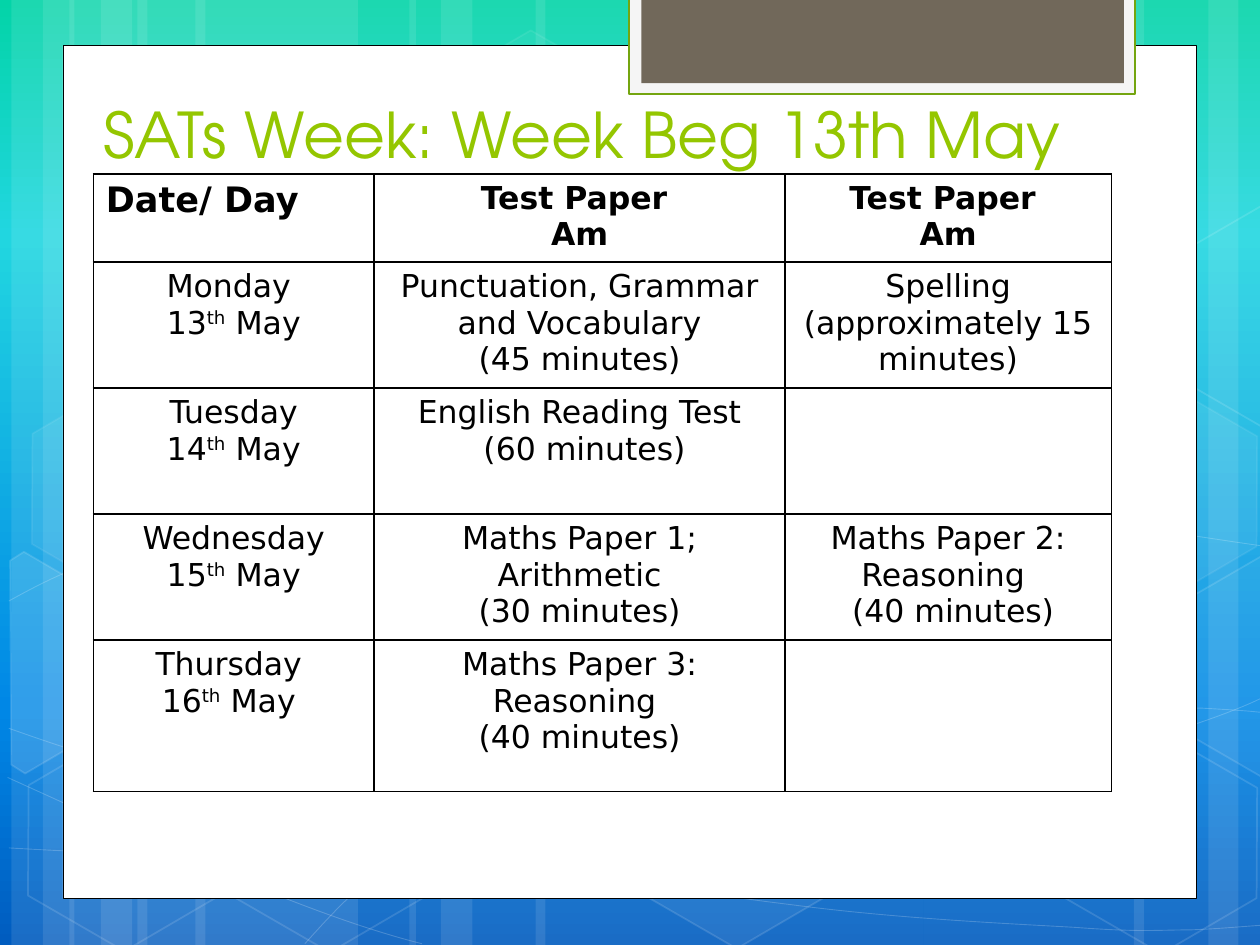
from typing import NamedTuple, Optional

from lxml import etree
from pptx import Presentation
from pptx import util as u
from pptx.dml.color import RGBColor
from pptx.enum import shapes, text
from pptx.oxml import ns, parse_xml

WHITE = RGBColor(0xFF, 0xFF, 0xFF)
BLACK = RGBColor(0, 0, 0)
PALE = RGBColor(0xF5, 0xF5, 0xF5)
GREEN = RGBColor(0x74, 0xA5, 0x10)
LIME = RGBColor(0x94, 0xC6, 0x00)
TAUPE = RGBColor(0x71, 0x68, 0x5A)
SKY = [(0, RGBColor(0x03, 0xD4, 0xA8)), (25, RGBColor(0x21, 0xD6, 0xE0)),
       (75, RGBColor(0x00, 0x87, 0xE6)), (100, RGBColor(0x00, 0x5C, 0xBF))]
BODY, HEAD = "DejaVu Sans", "TeX Gyre Adventor"


class Style(NamedTuple):
    fill: Optional[RGBColor] = None
    fill_alpha: int = 100
    line: Optional[RGBColor] = None
    width: float = 1
    line_alpha: int = 100


class Hexagon(NamedTuple):
    x: float
    y: float
    fill_alpha: int
    line_alpha: int


class Shard(NamedTuple):
    points: list
    fill_alpha: int


STRIPES = [(1.09, 1.75), (0.09, 0.5), (0.34, 0.83), (1.55, 1.75), (0.55, 0.5), (0.8, 0.83),
           (7.33, 1.75), (9.59, 0.5), (9, 0.83), (4.25, 3.08), (3.25, 0.5), (3.5, 0.83)]
CURVES = [
    [(0.07, 6.73), (0.61, 6.76), (1.15, 6.79), (1.9, 6.78), (2.65, 6.77), (3.58, 6.75),
     (4.58, 6.65), (5.58, 6.55), (7, 6.36), (7.92, 6.17), (8.83, 5.98), (9.77, 5.68),
     (10.07, 5.51)],
    [(0.07, 4.77), (0.36, 4.61), (0.65, 4.46), (1.21, 4.31), (1.78, 4.16), (2.59, 3.94),
     (3.47, 3.87), (4.36, 3.8), (5.44, 3.79), (6.54, 3.87), (7.64, 3.95), (9.47, 4.26),
     (10.07, 4.34)],
    [(0.06, 6.17), (1.27, 6.72), (2.47, 7.27), (3.35, 7.49)],
    [(0.07, 5.78), (0.38, 5.89), (0.7, 6), (1.28, 6.16), (1.86, 6.31), (2.73, 6.56),
     (3.57, 6.73), (4.4, 6.9), (5.45, 7.08), (6.28, 7.18), (7.11, 7.29), (8, 7.33),
     (8.53, 7.36), (9.06, 7.4), (9.19, 7.38), (9.45, 7.38), (9.71, 7.37), (9.89, 7.35),
     (10.07, 7.34)],
    [(2.42, 7.49), (2.6, 7.29), (2.78, 7.09), (3.02, 6.91), (3.26, 6.72), (3.6, 6.53),
     (3.88, 6.39), (4.16, 6.25), (4.33, 6.19), (4.69, 6.09), (5.06, 5.99), (5.73, 5.85),
     (6.08, 5.78), (6.44, 5.71), (6.49, 5.71), (6.8, 5.69), (7.11, 5.66), (7.6, 5.63),
     (7.94, 5.62), (8.29, 5.61), (8.86, 5.62), (8.86, 5.62), (9.08, 5.62), (9.31, 5.62),
     (9.53, 5.62), (9.71, 5.63), (9.88, 5.64), (9.97, 5.65), (10.06, 5.66), (10.03, 5.65),
     (10.06, 5.66)],
]
HEXAGONS = [Hexagon(3.34, 0.36, 4, 8), Hexagon(4.97, 5.89, 6, 12), Hexagon(0.11, 5.91, 0, 12),
            Hexagon(0.14, 3.12, 7, 8), Hexagon(1.74, 5.92, 0, 12), Hexagon(7.53, 4.53, 10, 12),
            Hexagon(8.34, 5.93, 0, 12), Hexagon(8.34, 3.14, 7, 8)]
SHARDS = [
    Shard([(0.08, 4.45), (0.19, 4.38), (0.96, 4.83), (0.95, 5.7), (0.2, 6.14), (0.09, 6.07)], 10),
    Shard([(9.26, 4.85), (10.02, 4.41), (10.09, 4.46), (10.09, 6.13), (10.02, 6.17),
           (9.26, 5.73)], 4),
    Shard([(9.26, 2.07), (10.02, 1.63), (10.1, 1.68), (10.09, 3.35), (10.02, 3.39),
           (9.26, 2.95)], 0),
]
COLUMNS = [2.23, 3.26, 2.59]
ROWS = [0.7, 0.74, 1, 1, 1.2]
TIMETABLE = [
    ["Date/ Day", "Test Paper \nAm", "Test Paper \nAm"],
    ["Monday \n13^th^ May", "Punctuation, Grammar and Vocabulary\n(45 minutes)",
     "Spelling (approximately 15 minutes)"],
    ["Tuesday\n 14^th^ May ", "English Reading Test\n (60 minutes)", ""],
    ["Wednesday\n 15^th^ May ", "Maths Paper 1; Arithmetic\n(30 minutes)",
     "Maths Paper 2: Reasoning \n (40 minutes)"],
    ["Thursday \n16^th^ May ", "Maths Paper 3: Reasoning \n(40 minutes)", ""],
]


def set_alpha(sp, where: str, percent: int) -> None:
    """Make the solid colour found under the shape properties translucent."""
    clr = sp._element.spPr.find(where + "/" + ns.qn("a:srgbClr"))
    etree.SubElement(clr, ns.qn("a:alpha"), val=str(percent * 1000))


def paint(sp, style: Style) -> None:
    """Apply fill, line and transparency to a shape without a shadow."""
    sp.shadow.inherit = False
    if style.fill is None or style.fill_alpha == 0:
        sp.fill.background()
    else:
        sp.fill.solid()
        sp.fill.fore_color.rgb = style.fill
        if style.fill_alpha < 100:
            set_alpha(sp, ns.qn("a:solidFill"), style.fill_alpha)
    if style.line is None:
        sp.line.fill.background()
    else:
        sp.line.width = u.Pt(style.width)
        sp.line.color.rgb = style.line
        if style.line_alpha < 100:
            set_alpha(sp, ns.qn("a:ln") + "/" + ns.qn("a:solidFill"), style.line_alpha)


def add_preset(s, kind, x: float, y: float, w: float, h: float, style: Style):
    """Add a painted preset shape."""
    sp = s.shapes.add_shape(kind, u.Inches(x), u.Inches(y), u.Inches(w), u.Inches(h))
    paint(sp, style)
    return sp


def add_outline(s, points: list, style: Style, close: bool):
    """Add a painted freeform through points given in inches."""
    pts = [(u.Inches(x), u.Inches(y)) for x, y in points]
    fb = s.shapes.build_freeform(*pts[0])
    fb.add_line_segments(pts[1:], close=close)
    sp = fb.convert_to_shape()
    paint(sp, style)
    return sp


def add_curve(s, knots: list, style: Style) -> None:
    """Add an open chain of cubic curves, three points to a segment."""
    sp = add_outline(s, knots, style, False)
    lines = list(sp._element.iter(ns.qn("a:lnTo")))
    for i in range(0, len(lines), 3):
        curve = etree.Element(ns.qn("a:cubicBezTo"))
        lines[i].addprevious(curve)
        for line in lines[i:i + 3]:
            curve.append(line[0])
            line.getparent().remove(line)


def write(tf, content: str, *, size: float, font: str = BODY, color: RGBColor = BLACK,
          bold: bool = False, align=text.PP_ALIGN.CENTER) -> None:
    """Write one paragraph per line, with carets around superscripts."""
    for i, line in enumerate(content.split("\n")):
        p = tf.paragraphs[0] if i == 0 else tf.add_paragraph()
        p.alignment = align
        for j, part in enumerate(line.split("^")):
            if not part:
                continue
            r = p.add_run()
            r.text = part
            r.font.size, r.font.name, r.font.bold = u.Pt(size), font, bold
            r.font.color.rgb = color
            if j % 2:
                r.font._element.set("baseline", "30000")


def set_background(s) -> None:
    """Fill the slide with the vertical sky gradient."""
    s.background.fill.gradient()
    grad = s.background._cSld.find(".//" + ns.qn("a:gradFill"))
    stops = "".join(f'<a:gs pos="{pos * 1000}"><a:srgbClr val="{rgb}"/></a:gs>'
                    for pos, rgb in SKY)
    grad.getparent().replace(grad, parse_xml(
        f'<a:gradFill {ns.nsdecls("a")} rotWithShape="1"><a:gsLst>{stops}</a:gsLst>'
        '<a:lin ang="5400000" scaled="0"/></a:gradFill>'))


def add_backdrop(s) -> None:
    """Draw the stripes, curves and hexagons behind the page."""
    rect = shapes.MSO_SHAPE.RECTANGLE
    for x, w in STRIPES:
        add_preset(s, rect, x, 0, w, 7.5, Style(WHITE, 10))
    for knots in CURVES:
        add_curve(s, knots, Style(line=WHITE, width=0.5, line_alpha=20))
    for h in HEXAGONS:
        sp = add_preset(s, shapes.MSO_SHAPE.HEXAGON, h.x, h.y, 1.75, 1.52,
                        Style(WHITE, h.fill_alpha, WHITE, 1, h.line_alpha))
        sp.rotation = 30
        sp.adjustments[0], sp.adjustments[1] = 0.285, 1.155
    for shard in SHARDS:
        add_outline(s, shard.points, Style(WHITE, shard.fill_alpha, WHITE, 1, 12), True)
    add_preset(s, rect, 0.5, 0.36, 9, 6.77, Style(WHITE, line=BLACK, width=0.5))
    add_preset(s, rect, 4.99, -0.02, 4.02, 0.77, Style(PALE, line=GREEN, width=1.25))
    add_preset(s, rect, 5.09, -0.02, 3.83, 0.68, Style(TAUPE))


def add_title(s) -> None:
    """Add the slide heading."""
    tf = s.shapes.add_textbox(u.Inches(0.72), u.Inches(0.76), u.Inches(8.82),
                              u.Inches(1.25)).text_frame
    tf.word_wrap, tf.margin_top = True, 0
    write(tf, "SATs Week: Week Beg 13th May", size=36, font=HEAD, color=LIME,
          align=text.PP_ALIGN.LEFT)


def add_timetable(s) -> None:
    """Add the table of test papers."""
    tbl = s.shapes.add_table(len(ROWS), len(COLUMNS), u.Inches(0.74), u.Inches(1.38),
                             u.Inches(sum(COLUMNS)), u.Inches(sum(ROWS))).table
    for col, w in zip(tbl.columns, COLUMNS):
        col.width = u.Inches(w)
    for i, (row, h) in enumerate(zip(tbl.rows, ROWS)):
        row.height = u.Inches(h)
        for j, cell in enumerate(row.cells):
            tcPr = cell._tc.get_or_add_tcPr()
            for side in "LRTB":
                tcPr.append(parse_xml(
                    f'<a:ln{side} {ns.nsdecls("a")} w="12700"><a:solidFill>'
                    f'<a:srgbClr val="{BLACK}"/></a:solidFill></a:ln{side}>'))
            cell.fill.background()
            corner = i == j == 0
            write(cell.text_frame, TIMETABLE[i][j], size=20 if corner else 18, bold=i == 0,
                  align=text.PP_ALIGN.LEFT if corner else text.PP_ALIGN.CENTER)


def main() -> None:
    """Build and save the slide."""
    prs = Presentation()
    prs.slide_width, prs.slide_height = u.Inches(10), u.Inches(7.5)
    s = prs.slides.add_slide(prs.slide_layouts[6])
    set_background(s)
    add_backdrop(s)
    add_title(s)
    add_timetable(s)
    prs.save("out.pptx")


if __name__ == "__main__":
    main()
